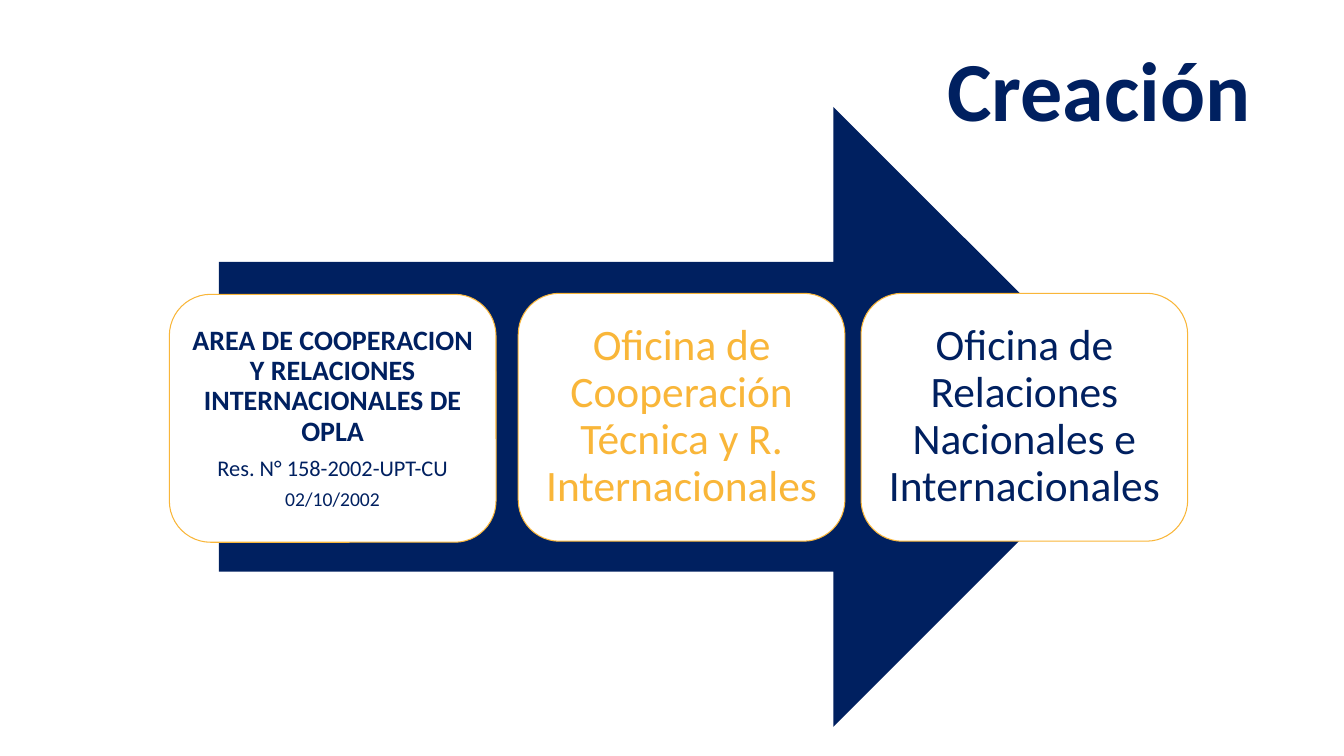
from pptx import Presentation
from pptx.dml.color import RGBColor
from pptx.enum.shapes import MSO_SHAPE as Shape
from pptx.enum.text import MSO_ANCHOR as Anchor, PP_ALIGN as Align
from pptx.util import Inches, Pt

COLORS = {"navy": "002060", "gold": "F9B639", "white": "FFFFFF"}

TITLE = ("Creación ", 60, True)
STAGES = [
    {"at": (1.68, 2.92), "inset": 0.08, "color": "navy", "lines": [
        ("AREA DE COOPERACION Y RELACIONES INTERNACIONALES DE OPLA", 20, True),
        ("Res. N° 158-2002-UPT-CU", 16, False),
        ("02/10/2002", 14, False),
    ]},
    {"at": (5.14, 2.91), "inset": 0.13, "color": "gold", "lines": [
        ("Oficina de Cooperación Técnica y R. Internacionales", 31, False),
    ]},
    {"at": (8.54, 2.91), "inset": 0.13, "color": "navy", "lines": [
        ("Oficina de Relaciones Nacionales e Internacionales", 31, False),
    ]},
]
STAGE_SIZE = (3.24, 2.46)
SPACE_AFTER = 0.35


def rgb(color):
    return RGBColor.from_string(COLORS[color])


def apply(target, values):
    for key, value in values.items():
        setattr(target, key, value)


def write(frame, lines, color, align, gap=0):
    apply(frame, {"word_wrap": True, "vertical_anchor": Anchor.MIDDLE})
    for index, (text, size, bold) in enumerate(lines):
        paragraph = frame.add_paragraph() if index else frame.paragraphs[0]
        apply(paragraph, {"alignment": align, "line_spacing": 0.9,
                          "space_after": Pt(round(size * gap, 1))})
        run = paragraph.add_run()
        run.text = text
        apply(run.font, {"name": "Calibri", "size": Pt(size), "bold": bold})
        run.font.color.rgb = rgb(color)


def add_solid(slide, kind, box, fill):
    solid = slide.shapes.add_shape(kind, *map(Inches, box))
    solid.shadow.inherit = False
    solid.fill.solid()
    solid.fill.fore_color.rgb = rgb(fill)
    return solid


def add_stage(slide, stage):
    card = add_solid(slide, Shape.ROUNDED_RECTANGLE, stage["at"] + STAGE_SIZE, "white")
    card.line.color.rgb = rgb("gold")
    card.line.width = Pt(0.75)
    inset = Inches(stage["inset"])
    sides = ("left", "right", "top", "bottom")
    apply(card.text_frame, {f"margin_{side}": inset for side in sides})
    write(card.text_frame, stage["lines"], stage["color"], Align.CENTER, SPACE_AFTER)


def main():
    deck = Presentation()
    apply(deck, {"slide_width": Inches(13.33), "slide_height": Inches(7.5)})
    slide = deck.slides.add_slide(deck.slide_layouts[6])

    heading = slide.shapes.add_textbox(*map(Inches, (1.19, 0.21, 11.5, 1.45)))
    write(heading.text_frame, [TITLE], "navy", Align.RIGHT)

    arrow = add_solid(slide, Shape.RIGHT_ARROW, (2.17, 1.06, 9.17, 6.15), "navy")
    arrow.line.fill.background()
    for stage in STAGES:
        add_stage(slide, stage)
    deck.save("out.pptx")


if __name__ == "__main__":
    main()
